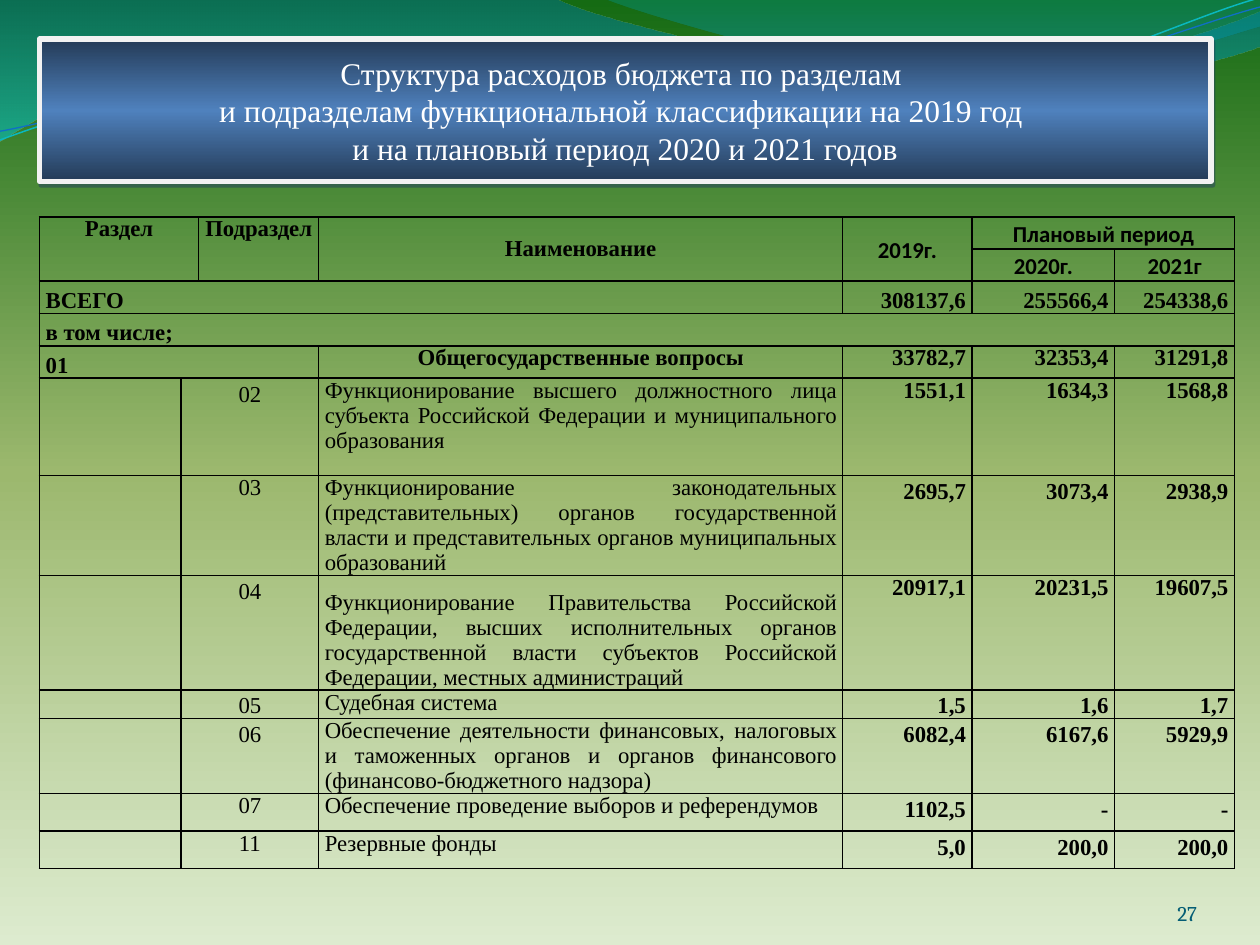
from lxml import etree
from pptx import Presentation
from pptx.dml.color import RGBColor
from pptx.enum import text
from pptx.oxml import ns
from pptx.util import Pt

BLACK = RGBColor(0, 0, 0)
WHITE = RGBColor(255, 255, 255)
FRAME = RGBColor(0xF2, 0xF2, 0xF2)
SHADE = RGBColor(0x24, 0x3F, 0x60)
BLUE = RGBColor(0x4F, 0x81, 0xBD)
PAGE = RGBColor(0x04, 0x5D, 0x75)
PALE = RGBColor(0xDD, 0xEB, 0xCF)
OLIVE = RGBColor(0x9C, 0xB8, 0x6E)
GREEN = RGBColor(0x15, 0x6B, 0x13)
TEAL = RGBColor(0x00, 0x74, 0xA1)
CYAN = RGBColor(0x00, 0xC6, 0xCF)
SEA = RGBColor(0x00, 0xA1, 0xA9)
SKY = RGBColor(0x00, 0x8B, 0xBF)
AQUA = RGBColor(0x0A, 0xB8, 0xBF)
ROYAL = RGBColor(0x0F, 0x6F, 0xC6)

SERIF = "Times New Roman"
LEFT, MID, RIGHT, JUST = (text.PP_ALIGN.LEFT, text.PP_ALIGN.CENTER,
                          text.PP_ALIGN.RIGHT, text.PP_ALIGN.JUSTIFY)
TOP, HALF, LOW = (text.MSO_ANCHOR.TOP, text.MSO_ANCHOR.MIDDLE,
                  text.MSO_ANCHOR.BOTTOM)

# Each path: start point, then curves (6 numbers) and lines (2 numbers)
WIDE = [(0, -1), (317, -1), (343, 12, 478, 45, 546, 45),
        (614, 45, 690, 19, 720, 6.5), (721, 26), (708, 32, 626, 55, 537, 54),
        (448, 54, 275, 20, 185, 24), (93, 25, 33, 60, -1, 81)]
SLIM = [(345, -1), (366, 8, 491, 45, 554, 47), (616, 50, 692, 23, 720, 15),
        (720, 0)]
UPPER = [(0, 80), (35, 67, 114, 41, 199, 37), (284, 34, 427, 64, 513, 58),
         (599, 51, 675, 11, 719, -1)]
LOWER = [(0, 75), (34, 69, 118, 44, 204, 40), (290, 37, 430, 60, 516, 54),
         (602, 48, 678, 15, 720, 4)]

COLS = [81, 9, 68.5, 299.5, 74, 81.5, 68.5]
ROWS = [18.3, 18.3, 18.7, 18.5, 18.5, 55.5, 55.5, 65.5, 11.5, 40.3, 21.4, 21.4]
HEAD = dict(before=12, after=3)
LOOSE = dict(line=1.15, after=10)
TIGHT = {}
# Code, name, values, code spacing, value spacing, name anchor
ITEMS = [
    ("02", "Функционирование высшего должностного лица субъекта Российской "
     "Федерации и муниципального образования",
     ("1551,1", "1634,3", "1568,8"), LOOSE, TIGHT, TOP),
    ("03", "Функционирование законодательных (представительных) органов "
     "государственной власти и представительных органов муниципальных "
     "образований", ("2695,7", "3073,4", "2938,9"), TIGHT, LOOSE, TOP),
    ("04", "Функционирование Правительства Российской Федерации, высших "
     "исполнительных органов государственной власти субъектов Российской "
     "Федерации, местных администраций",
     ("20917,1", "20231,5", "19607,5"), LOOSE, TIGHT, LOW),
    ("05", "Судебная система", ("1,5", "1,6", "1,7"), LOOSE, LOOSE, TOP),
    ("06", "Обеспечение деятельности финансовых, налоговых и таможенных "
     "органов и органов финансового (финансово-бюджетного надзора)",
     ("6082,4", "6167,6", "5929,9"), LOOSE, LOOSE, TOP),
    ("07", "Обеспечение проведение выборов и референдумов",
     ("1102,5", "-", "-"), TIGHT, LOOSE, TOP),
    ("11", "Резервные фонды", ("5,0", "200,0", "200,0"), TIGHT, LOOSE, TOP),
]


def node(up, tag, **attrs):
    return etree.SubElement(up, ns.qn(tag), {k: str(v) for k, v in attrs.items()})


def tint(up, color, alpha=100, dark=False):
    clr = node(up, "a:srgbClr", val=color)
    if dark:
        node(clr, "a:gamma")
        node(clr, "a:shade", val=46275)
        node(clr, "a:invGamma")
    if alpha < 100:
        node(clr, "a:alpha", val=alpha * 1000)


def blend(item, fill, stops, angle):
    """Gradient fill; stops are (percent, colour, opacity, darker)."""
    fill.gradient()
    grad = item.element.find(".//" + ns.qn("a:gradFill"))
    row = grad.find(ns.qn("a:gsLst"))
    row.clear()
    for pos, *look in stops:
        tint(node(row, "a:gs", pos=pos * 1000), *look)
    grad.find(ns.qn("a:lin")).set("ang", str(angle * 60000))


def write(frame, words, size=13, font=SERIF, color=BLACK, bold=False,
          align=LEFT, line=None, before=0, after=0):
    for i, part in enumerate(words.split("\n")):
        para = frame.add_paragraph() if i else frame.paragraphs[0]
        para.alignment, para.line_spacing = align, line
        para.space_before, para.space_after = Pt(before), Pt(after)
        run = para.add_run()
        run.text = part
        run.font.size, run.font.name = Pt(size), font
        run.font.bold, run.font.color.rgb = bold, color


def curve(slide, route, close):
    """Freeform whose lines through control points turn into Bezier curves."""
    dots = [(Pt(step[i]), Pt(step[i + 1]))
            for step in route for i in range(0, len(step), 2)]
    pen = slide.shapes.build_freeform(*dots[0])
    pen.add_line_segments(dots[1:], close=close)
    shape = pen.convert_to_shape()
    lines = iter(list(shape.element.iter(ns.qn("a:lnTo"))))
    for step in route[1:]:
        first = next(lines)
        if len(step) == 6:
            first.tag = ns.qn("a:cubicBezTo")
            for other in (next(lines), next(lines)):
                first.append(other[0])
                other.getparent().remove(other)
    shape.shadow.inherit = False
    return shape


def waves(slide):
    for route, stops in ((WIDE, [(0, TEAL, 45), (100, CYAN, 55)]),
                         (SLIM, [(0, SEA, 30), (80, SKY, 45)])):
        wave = curve(slide, route, True)
        blend(wave, wave.fill, stops, 90)
        wave.line.fill.background()
    for route, color, width in ((UPPER, AQUA, 0.85), (LOWER, ROYAL, 0.75)):
        thread = curve(slide, route, False)
        thread.fill.background()
        thread.line.color.rgb, thread.line.width = color, Pt(width)


def banner(slide, x, y, w, h):
    title = slide.shapes.title
    title.left, title.top, title.width, title.height = Pt(x), Pt(y), Pt(w), Pt(h)
    title.element.getparent().append(title.element)
    # Rounded plate
    geom = node(title.element.spPr, "a:prstGeom", prst="flowChartAlternateProcess")
    node(geom, "a:avLst")
    blend(title, title.fill, [(0, BLUE, 100, True), (50, BLUE),
                              (100, BLUE, 100, True)], 90)
    title.line.color.rgb, title.line.width = FRAME, Pt(3)
    title.shadow.inherit = False
    glow = title.element.find(".//" + ns.qn("a:effectLst"))
    tint(node(glow, "a:outerShdw", dist=Pt(2.2), dir=63 * 60000), SHADE, 50)
    # Wording
    frame = title.text_frame
    frame.auto_size, frame.vertical_anchor = text.MSO_AUTO_SIZE.NONE, HALF
    write(frame, "Структура расходов бюджета по разделам \n"
          "и подразделам функциональной классификации на 2019 год \n"
          "и на плановый период 2020 и 2021 годов",
          size=18, color=WHITE, align=MID)


def budget(slide, x, y):
    grid = slide.shapes.add_table(len(ROWS), len(COLS), Pt(x), Pt(y),
                                  Pt(sum(COLS)), Pt(sum(ROWS))).table
    grid.first_row = grid.horz_banding = False
    for col, width in zip(grid.columns, COLS):
        col.width = Pt(width)
    for row, height in zip(grid.rows, ROWS):
        row.height = Pt(height)

    def put(r, c, words, rows=1, cols=1, anchor=TOP, **form):
        cell = grid.cell(r, c)
        if rows * cols > 1:
            cell.merge(grid.cell(r + rows - 1, c + cols - 1))
        cell.vertical_anchor = anchor
        write(cell.text_frame, words, **{"bold": True, **form})

    # Margins, borders and small blank lines in all cells
    for cell in grid.iter_cells():
        cell.margin_left = cell.margin_right = Pt(3.6)
        cell.margin_top = cell.margin_bottom = 0
        cell.fill.background()
        props = cell._tc.get_or_add_tcPr()
        for i, side in enumerate(("a:lnL", "a:lnR", "a:lnT", "a:lnB")):
            edge = node(props, side, w=Pt(1))
            tint(node(edge, "a:solidFill"), BLACK)
            props.insert(i, edge)
        node(cell.text_frame.paragraphs[0]._p, "a:endParaRPr", sz=1300)

    # Header
    put(0, 0, "Раздел", 2, 2, align=MID, **HEAD)
    put(0, 2, "Подраздел", 2, align=MID, **HEAD)
    put(0, 3, "Наименование", 2, anchor=HALF, align=MID, **HEAD)
    sans = dict(font="Calibri", align=MID, **LOOSE)
    put(0, 4, "2019г.", 2, anchor=HALF, **sans)
    put(0, 5, "Плановый период", 1, 2, **sans)
    put(1, 5, "2020г.", **sans)
    put(1, 6, "2021г", **sans)

    def sums(r, values, **form):
        for c, value in enumerate(values, 4):
            put(r, c, value, align=RIGHT, **form)

    # Totals and section
    put(2, 0, "ВСЕГО", 1, 4, anchor=LOW)
    sums(2, ("308137,6", "255566,4", "254338,6"), anchor=LOW)
    put(3, 0, "в том числе;", 1, 7, anchor=LOW)
    put(4, 0, "01", 1, 3, anchor=LOW)
    put(4, 3, "Общегосударственные вопросы", align=MID)
    sums(4, ("33782,7", "32353,4", "31291,8"))
    # Subsections
    for r, (code, name, values, gap, space, anchor) in enumerate(ITEMS, 5):
        put(r, 1, code, 1, 2, align=MID, bold=False, **gap)
        put(r, 3, name, bold=False, align=JUST, anchor=anchor)
        sums(r, values, **space)


def number(slide, x, y, w, h):
    frame = slide.shapes.add_textbox(Pt(x), Pt(y), Pt(w), Pt(h)).text_frame
    frame.word_wrap, frame.vertical_anchor = True, LOW
    frame.margin_left = frame.margin_right = 0
    frame.margin_top = frame.margin_bottom = 0
    write(frame, "27", size=12, font="Cambria", color=PAGE, align=RIGHT)


def main():
    deck = Presentation()
    deck.slide_width, deck.slide_height = Pt(720), Pt(540)
    slide = deck.slides.add_slide(deck.slide_layouts[5])
    blend(slide, slide.background.fill, [(0, PALE), (50, OLIVE), (100, GREEN)], 270)
    waves(slide)
    number(slide, 624, 500.5, 60, 28.5)
    banner(slide, 22.5, 22.3, 669.5, 81.5)
    budget(slide, 22.5, 123.9)
    deck.save("out.pptx")


if __name__ == "__main__":
    main()
